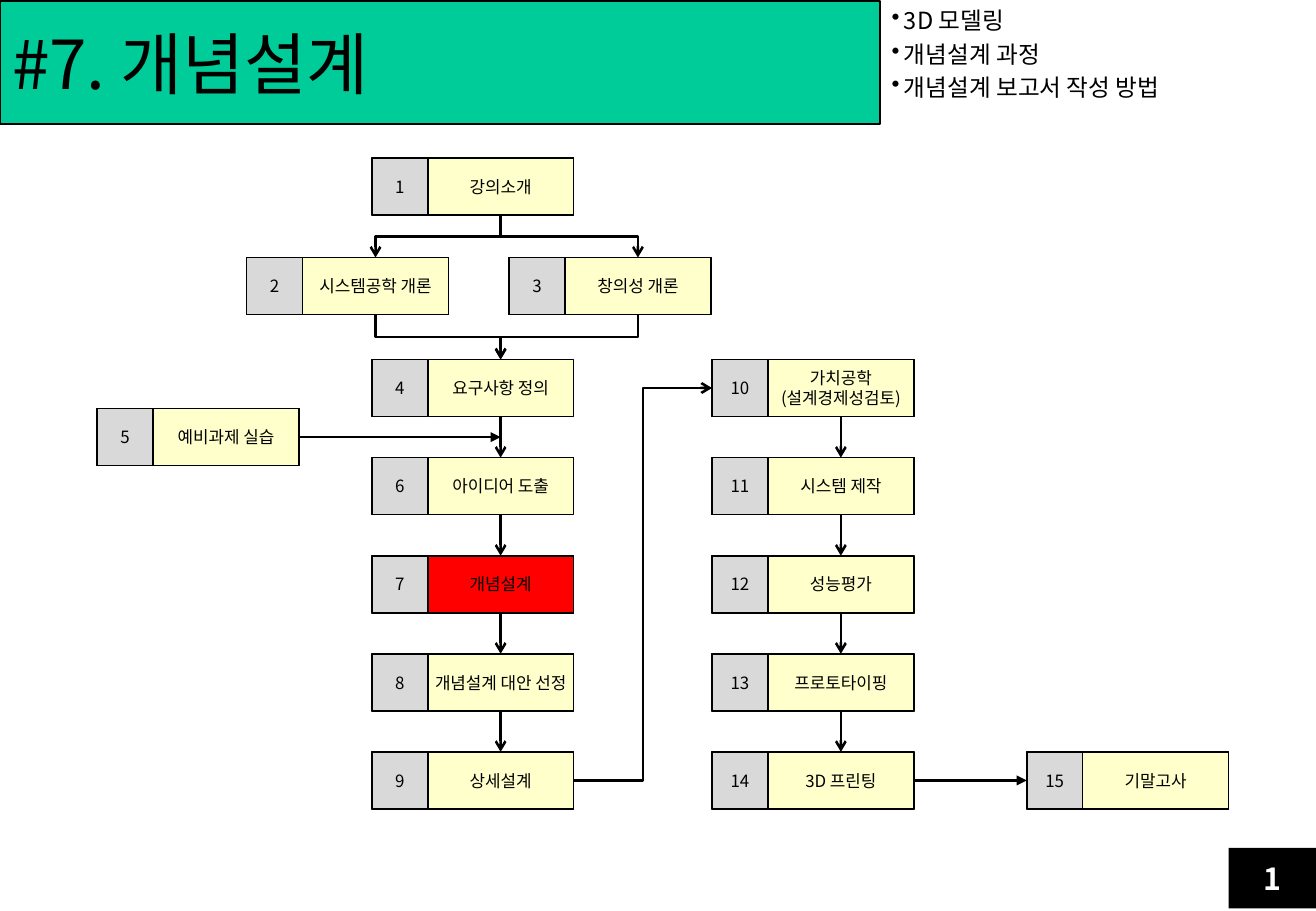
from lxml import etree
from pptx import Presentation
from pptx import util as u
from pptx.dml.color import RGBColor
from pptx.enum import shapes, text
from pptx.oxml import ns

WIDTH, HEIGHT = 10.83, 7.5
FONT = "Noto Sans CJK KR"
BLACK, WHITE, GREEN = "000000", "FFFFFF", "00CC99"
GRAY, CREAM, RED = "D9D9D9", "FFFFCC", "FF0000"

COLUMNS = [0.8, 2.03, 3.06, 4.19, 5.86, 8.45]
FIRST_ROWS = [1.3, 2.12]
CHAIN_TOP, CHAIN_BOTTOM, CHAIN_GAPS = 2.96, 6.19, 4
BOX_WIDTH, BADGE_WIDTH, BOX_HEIGHT = 1.66, 0.46, 0.47
HEADER_WIDTH, HEADER_HEIGHT = 7.24, 1.01
TOP, LEFT, BOTTOM, RIGHT = range(4)

# number: (column, row, label lines); half a row lies between two rows
STEPS = {
    1: (2, 0, ["강의소개"]),
    2: (1, 1, ["시스템공학 개론"]),
    3: (3, 1, ["창의성 개론"]),
    4: (2, 2, ["요구사항 정의"]),
    5: (0, 2.5, ["예비과제 실습"]),
    6: (2, 3, ["아이디어 도출"]),
    7: (2, 4, ["개념설계"]),
    8: (2, 5, ["개념설계 대안 선정"]),
    9: (2, 6, ["상세설계"]),
    10: (4, 2, ["가치공학", "(설계경제성검토)"]),
    11: (4, 3, ["시스템 제작"]),
    12: (4, 4, ["성능평가"]),
    13: (4, 5, ["프로토타이핑"]),
    14: (4, 6, ["3D 프린팅"]),
    15: (5, 6, ["기말고사"]),
}
CURRENT_STEP = 7
CHAINS = [(4, 6, 7, 8, 9), (10, 11, 12, 13, 14)]
BRANCHES = [(1, 2), (1, 3), (2, 4), (3, 4)]
TOPICS = ["3D 모델링", "개념설계 과정", "개념설계 보고서 작성 방법"]


def color(value):
    return RGBColor.from_string(value)


def row_top(row):
    if row < len(FIRST_ROWS):
        return FIRST_ROWS[row]
    step = (CHAIN_BOTTOM - CHAIN_TOP) / CHAIN_GAPS
    return CHAIN_TOP + (row - len(FIRST_ROWS)) * step


def side_point(shape, side):
    """Return the middle of a side, numbered like its connection site."""
    across = {LEFT: 0, RIGHT: shape.width}.get(side, shape.width // 2)
    down = {TOP: 0, BOTTOM: shape.height}.get(side, shape.height // 2)
    return shape.left + across, shape.top + down


class Flowchart:
    def __init__(self, presentation):
        layout = presentation.slide_layouts.get_by_name("Title Only")
        self.slide = presentation.slides.add_slide(layout)

    def paint(self, shape, fill, line=BLACK):
        shape.fill.solid()
        shape.fill.fore_color.rgb = color(fill)
        if line:
            shape.line.color.rgb = color(line)
            shape.line.width = u.Pt(1)
        else:
            shape.line.fill.background()

    def add_text(self, shape, lines, size, ink=BLACK, align=text.PP_ALIGN.CENTER, bold=False):
        frame = shape.text_frame
        frame.auto_size = text.MSO_AUTO_SIZE.NONE
        frame.word_wrap = False
        frame.vertical_anchor = text.MSO_ANCHOR.MIDDLE
        for index, line in enumerate(lines):
            paragraph = frame.paragraphs[0] if index == 0 else frame.add_paragraph()
            paragraph.alignment = align
            if len(lines) > 1:
                paragraph.line_spacing = u.Pt(round(size * 1.19, 1))
            run = paragraph.add_run()
            run.text = line
            run.font.size, run.font.bold, run.font.name = u.Pt(size), bold, FONT
            run.font.color.rgb = color(ink)
            etree.SubElement(run._r.get_or_add_rPr(), ns.qn("a:ea"), typeface=FONT)
        return frame

    def title(self, line):
        shape = self.slide.shapes.title
        shape.left, shape.top = 0, u.Inches(0.01)
        shape.width, shape.height = u.Inches(HEADER_WIDTH), u.Inches(HEADER_HEIGHT)
        self.paint(shape, GREEN)
        self.add_text(shape, [line], 40, align=text.PP_ALIGN.LEFT)

    def bullets(self, lines):
        area = (HEADER_WIDTH, 0, WIDTH - HEADER_WIDTH, 1.46)
        shape = self.slide.shapes.add_textbox(*map(u.Inches, area))
        frame = self.add_text(shape, lines, 14, align=text.PP_ALIGN.LEFT)
        frame.word_wrap = True
        frame.vertical_anchor = text.MSO_ANCHOR.TOP
        for paragraph in frame.paragraphs:
            paragraph.space_before = u.Pt(3.3)
            properties = paragraph._p.get_or_add_pPr()
            properties.set("marL", str(u.Inches(0.1)))
            properties.set("indent", str(-u.Inches(0.1)))
            etree.SubElement(properties, ns.qn("a:buChar"), char="•")

    def block(self, left, top, width, height, fill, line=BLACK,
              kind=shapes.MSO_SHAPE.FLOWCHART_PROCESS):
        area = map(u.Inches, (left, top, width, height))
        shape = self.slide.shapes.add_shape(kind, *area)
        shape.shadow.inherit = False
        self.paint(shape, fill, line)
        return shape

    def step(self, number, column, row, lines):
        """Draw a framed number and label, and return both of them."""
        left, top = COLUMNS[column], row_top(row)
        self.block(left, top, BOX_WIDTH, BOX_HEIGHT, WHITE)
        label = self.block(left + BADGE_WIDTH, top, BOX_WIDTH - BADGE_WIDTH, BOX_HEIGHT,
                           RED if number == CURRENT_STEP else CREAM)
        badge = self.block(left, top, BADGE_WIDTH, BOX_HEIGHT, GRAY)
        for shape, content, inset in ((label, lines, 0.04), (badge, [str(number)], 0)):
            frame = self.add_text(shape, content, 10)
            frame.margin_left = frame.margin_right = u.Inches(inset)
            frame.margin_top = frame.margin_bottom = u.Inches(0.04)
        return badge, label

    def connector(self, kind, start, end, head="arrow"):
        line = self.slide.shapes.add_connector(kind, *start, *end)
        line.line.color.rgb = color(BLACK)
        line.line.width = u.Pt(1.5)
        etree.SubElement(line.get_or_add_ln(), ns.qn("a:tailEnd"), type=head)
        etree.SubElement(line._element.spPr, ns.qn("a:effectLst"))
        return line

    def straight(self, source, source_side, target, target_side, head="arrow"):
        line = self.connector(shapes.MSO_CONNECTOR.STRAIGHT, side_point(source, source_side),
                              side_point(target, target_side), head)
        line.begin_connect(source, source_side)
        line.end_connect(target, target_side)

    def branch(self, source, target):
        """Draw an elbow that leaves downwards, by turning a sideways one."""
        (x1, y1), (x2, y2) = side_point(source, BOTTOM), side_point(target, TOP)
        middle_x, middle_y = (x1 + x2) // 2, (y1 + y2) // 2
        half_run, half_rise = (y2 - y1) // 2, abs(x2 - x1) // 2
        sign = 1 if x2 < x1 else -1
        start = (middle_x - sign * half_run, middle_y - half_rise)
        end = (middle_x + sign * half_run, middle_y + half_rise)
        line = self.connector(shapes.MSO_CONNECTOR.ELBOW, start, end)
        turn = sign * 90 % 360
        line._element.spPr.find(ns.qn("a:xfrm")).set("rot", str(turn * 60000))

    def page_number(self, number):
        shape = self.block(WIDTH - 0.72, 6.98, 0.72, 0.5, BLACK, None,
                           shapes.MSO_SHAPE.RECTANGLE)
        self.add_text(shape, [number], 18, WHITE, bold=True)


def main():
    presentation = Presentation()
    presentation.slide_width, presentation.slide_height = u.Inches(WIDTH), u.Inches(HEIGHT)
    chart = Flowchart(presentation)
    chart.title("#7. 개념설계")
    chart.bullets(TOPICS)
    chart.page_number("1")

    badges, labels = {}, {}
    for number, place in STEPS.items():
        badges[number], labels[number] = chart.step(number, *place)
    for chain in CHAINS:
        for source, target in zip(chain, chain[1:]):
            chart.straight(labels[source], BOTTOM, labels[target], TOP)
    for source, target in BRANCHES:
        chart.branch(labels[source], labels[target])

    chart.connector(shapes.MSO_CONNECTOR.ELBOW, side_point(labels[9], RIGHT),
                    side_point(badges[10], LEFT))
    chart.straight(labels[14], RIGHT, badges[15], LEFT, "triangle")
    start = side_point(labels[5], RIGHT)
    practice = chart.connector(shapes.MSO_CONNECTOR.STRAIGHT, start,
                               (side_point(labels[4], BOTTOM)[0], start[1]), "triangle")
    practice.begin_connect(labels[5], RIGHT)
    presentation.save("out.pptx")


if __name__ == "__main__":
    main()
